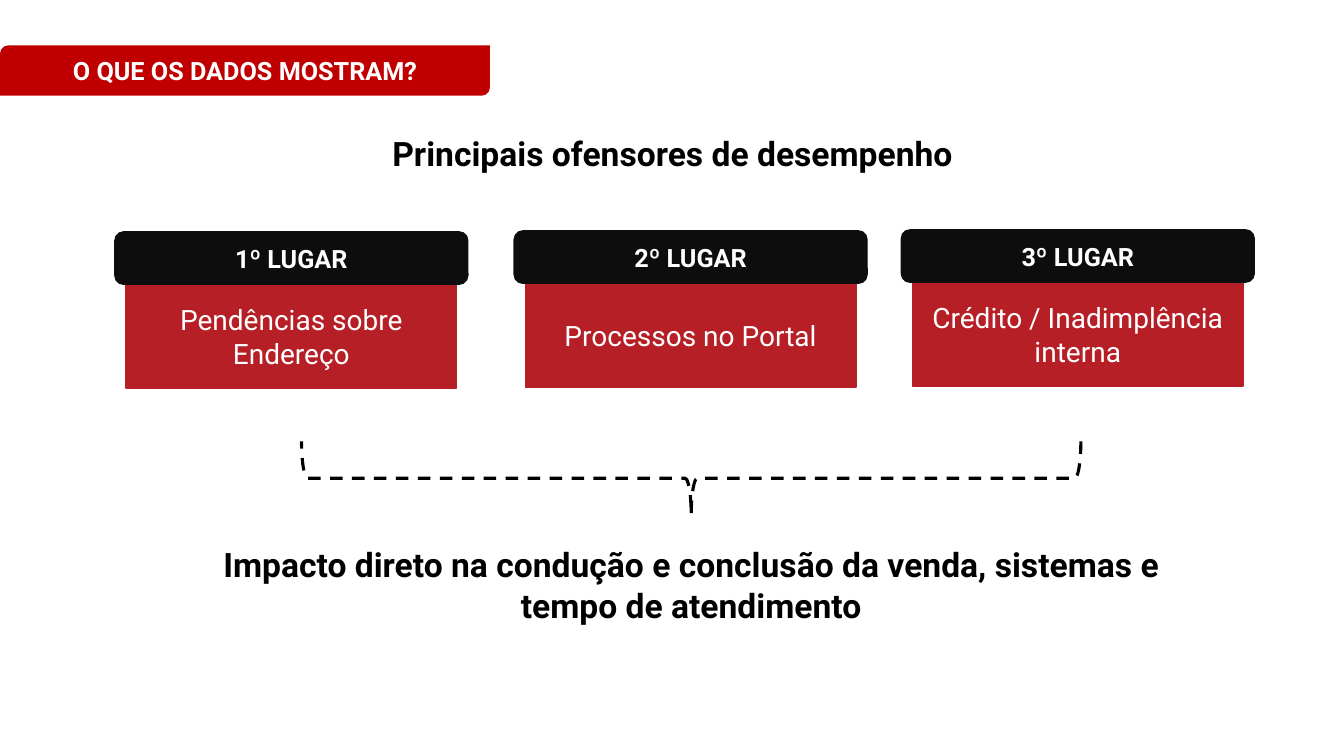
from pptx import Presentation
from pptx.dml.color import RGBColor
from pptx.enum.dml import MSO_LINE
from pptx.enum.shapes import MSO_SHAPE as SHAPE
from pptx.enum.text import MSO_ANCHOR, PP_ALIGN
from pptx.util import Inches, Pt

FONT = "Roboto"
WHITE = RGBColor(0xFF, 0xFF, 0xFF)
BLACK = RGBColor(0x00, 0x00, 0x00)
BANNER_RED = RGBColor(0xC0, 0x00, 0x00)
CARD_RED = RGBColor(0xB7, 0x1F, 0x26)
TAB_BLACK = RGBColor(0x0D, 0x0D, 0x0D)
TAB_LINE = RGBColor(0x0A, 0x10, 0x0F)

TAB_W, TAB_H = 3.5, 0.52
CARD_W, CARD_H = 3.28, 1.03
# Left and top of each ranking column
RANKING = [
    (1.14, 2.3, "1º LUGAR", "Pendências sobre Endereço"),
    (5.1, 2.29, "2º LUGAR", "Processos no Portal"),
    (8.94, 2.28, "3º LUGAR", "Crédito / Inadimplência interna"),
]


def write(sp, text, size, color, bold, anchor):
    tf = sp.text_frame
    tf.word_wrap = True
    tf.vertical_anchor = anchor
    p = tf.paragraphs[0]
    p.alignment = PP_ALIGN.CENTER
    r = p.add_run()
    r.text = text
    r.font.name = FONT
    r.font.size = Pt(size)
    r.font.bold = bold
    r.font.color.rgb = color


def add_block(s, kind, box, fill, line, text, size, bold=True):
    """Add a filled shape with centred white text; line may be None."""
    sp = s.shapes.add_shape(kind, *map(Inches, box))
    sp.shadow.inherit = False
    sp.fill.solid()
    sp.fill.fore_color.rgb = fill
    if line is None:
        sp.line.fill.background()
    else:
        sp.line.color.rgb = line
        sp.line.width = Pt(1)
    write(sp, text, size, WHITE, bold, MSO_ANCHOR.MIDDLE)


def add_banner(s, box, text):
    add_block(s, SHAPE.ROUND_2_DIAG_RECTANGLE, box, BANNER_RED, None, text, 18)


def add_heading(s, box, text):
    sp = s.shapes.add_textbox(*map(Inches, box))
    write(sp, text, 24, BLACK, True, MSO_ANCHOR.TOP)


def add_ranking_column(s, left, top, place, reason):
    """Add a red card with a wider black tab resting on its top edge."""
    card = (left + (TAB_W - CARD_W) / 2, top + TAB_H, CARD_W, CARD_H)
    add_block(s, SHAPE.RECTANGLE, card, CARD_RED, CARD_RED, reason, 20, False)
    tab = (left, top, TAB_W, TAB_H)
    add_block(s, SHAPE.ROUNDED_RECTANGLE, tab, TAB_BLACK, TAB_LINE, place, 18)


def add_downward_brace(s, left, top, width, height):
    """Add a dashed brace pointing down, filling the given box once turned."""
    x = left + (width - height) / 2
    y = top + (height - width) / 2
    sp = s.shapes.add_shape(SHAPE.RIGHT_BRACE, *map(Inches, (x, y, height, width)))
    sp.rotation = 90
    sp.shadow.inherit = False
    sp.fill.background()
    sp.line.color.rgb = BLACK
    sp.line.width = Pt(2.25)
    sp.line.dash_style = MSO_LINE.DASH


def main():
    prs = Presentation()
    prs.slide_width, prs.slide_height = Inches(13.33), Inches(7.5)
    s = prs.slides.add_slide(prs.slide_layouts[6])
    add_banner(s, (0, 0.45, 4.86, 0.5), "O QUE OS DADOS MOSTRAM?")
    add_heading(s, (0.82, 1.27, 11.7, 0.5), "Principais ofensores de desempenho")
    for column in RANKING:
        add_ranking_column(s, *column)
    add_downward_brace(s, 2.99, 4.38, 7.73, 0.73)
    add_heading(s, (1.68, 5.35, 10.35, 0.91),
                "Impacto direto na condução e conclusão da venda, "
                "sistemas e tempo de atendimento")
    prs.save("out.pptx")


if __name__ == "__main__":
    main()
